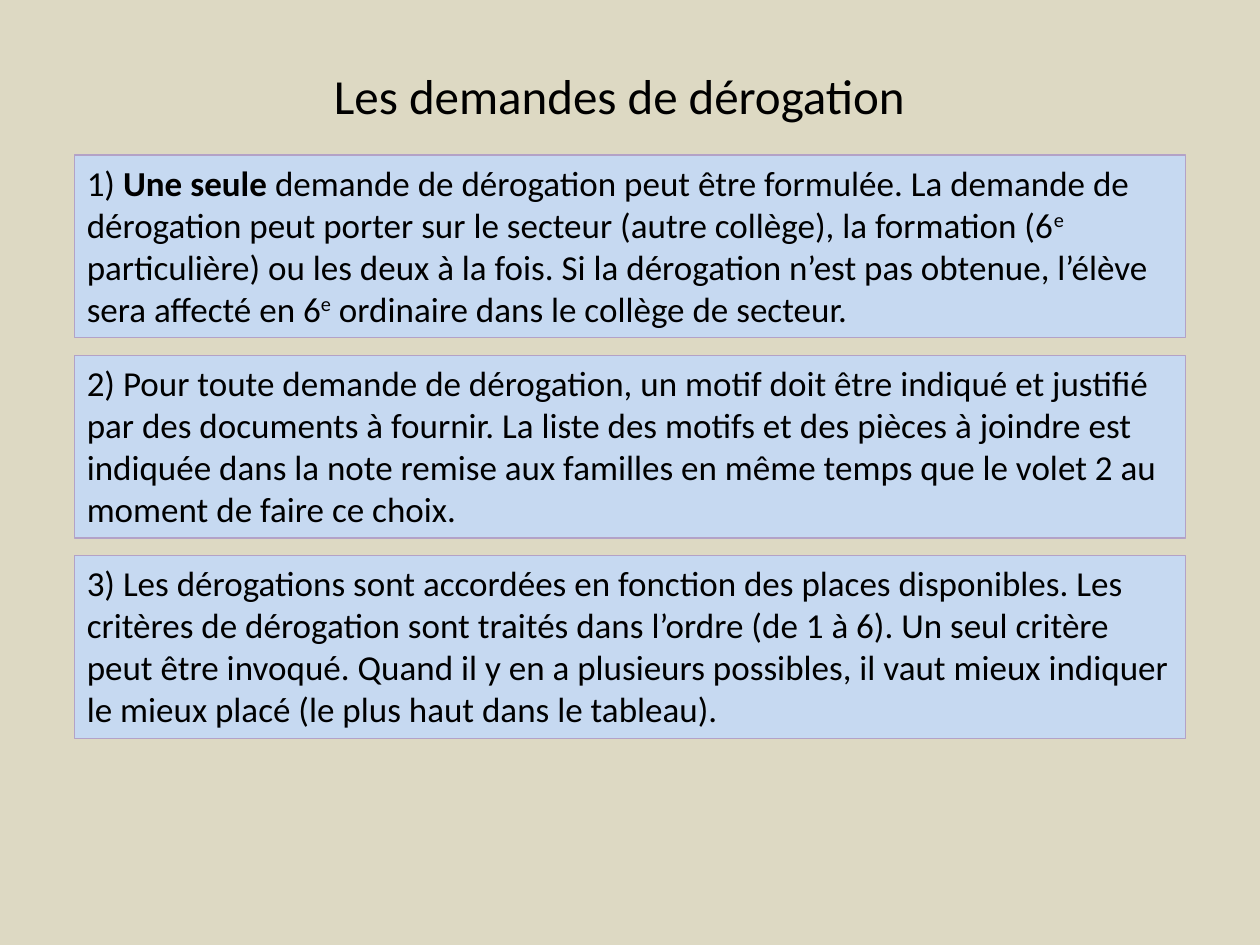
from dataclasses import dataclass

from pptx import Presentation
from pptx.dml.color import RGBColor
from pptx.enum.shapes import MSO_SHAPE
from pptx.enum.text import MSO_ANCHOR, MSO_AUTO_SIZE, PP_ALIGN
from pptx.slide import Slide
from pptx.util import Inches, Pt

BEIGE = RGBColor(0xDD, 0xD9, 0xC3)
PALE_BLUE = RGBColor(0xC6, 0xD9, 0xF1)
LILAC = RGBColor(0xB3, 0xA2, 0xC7)
BLACK = RGBColor(0, 0, 0)
FONT = "Calibri"

BOX_LEFT, BOX_TOP = 0.59, 1.23
BOX_WIDTH, BOX_HEIGHT = 8.82, 1.45
BOX_STEP = 1.59


@dataclass(frozen=True)
class Span:
    text: str
    bold: bool = False
    superscript: bool = False


ORDINAL = Span("e", superscript=True)
RULES = [
    [
        Span("1) "),
        Span("Une seule ", bold=True),
        Span("demande de dérogation peut être formulée. La demande de dérogation "
             "peut porter sur le secteur (autre collège), la formation (6"),
        ORDINAL,
        Span(" particulière) ou les deux à la fois. Si la dérogation n’est pas "
             "obtenue, l’élève sera affecté en 6"),
        ORDINAL,
        Span(" ordinaire dans le collège de secteur."),
    ],
    [
        Span("2) Pour toute demande de dérogation, un motif doit être indiqué et "
             "justifié par des documents à fournir. La liste des motifs et des pièces "
             "à joindre est indiquée dans la note remise aux familles en même temps "
             "que le volet 2 au moment de faire ce choix."),
    ],
    [
        Span("3) Les dérogations sont accordées en fonction des places disponibles. "
             "Les critères de dérogation sont traités dans l’ordre (de 1 à 6). Un seul "
             "critère peut être invoqué. Quand il y en a plusieurs possibles, il vaut "
             "mieux indiquer le mieux placé (le plus haut dans le tableau)."),
    ],
]


def format_paragraph(para, size: int, alignment: PP_ALIGN) -> None:
    para.alignment = alignment
    para.font.name = FONT
    para.font.size = Pt(size)
    para.font.color.rgb = BLACK


def add_title(page: Slide, text: str) -> None:
    title = page.shapes.title
    title.left, title.top = Inches(1.85), Inches(0.44)
    title.width, title.height = Inches(6.13), Inches(0.63)
    frame = title.text_frame
    frame.text = text
    frame.vertical_anchor = MSO_ANCHOR.MIDDLE
    format_paragraph(frame.paragraphs[0], 28, PP_ALIGN.CENTER)


def add_rule_box(page: Slide, top: float, spans: list[Span]) -> None:
    box = page.shapes.add_shape(
        MSO_SHAPE.RECTANGLE,
        Inches(BOX_LEFT), Inches(top), Inches(BOX_WIDTH), Inches(BOX_HEIGHT),
    )
    box.shadow.inherit = False
    box.fill.solid()
    box.fill.fore_color.rgb = PALE_BLUE
    box.line.color.rgb = LILAC
    box.line.width = Pt(0.75)
    frame = box.text_frame
    frame.word_wrap = True
    frame.auto_size = MSO_AUTO_SIZE.SHAPE_TO_FIT_TEXT
    frame.vertical_anchor = MSO_ANCHOR.TOP
    para = frame.paragraphs[0]
    format_paragraph(para, 20, PP_ALIGN.LEFT)
    for span in spans:
        run = para.add_run()
        run.text = span.text
        if span.bold:
            run.font.bold = True
        if span.superscript:
            run._r.get_or_add_rPr().set("baseline", "30000")


def main() -> None:
    deck = Presentation()
    deck.slide_width, deck.slide_height = Inches(10), Inches(7.5)
    page = deck.slides.add_slide(deck.slide_layouts[5])
    page.background.fill.solid()
    page.background.fill.fore_color.rgb = BEIGE
    add_title(page, "Les demandes de dérogation")
    for index, spans in enumerate(RULES):
        add_rule_box(page, BOX_TOP + index * BOX_STEP, spans)
    deck.save("out.pptx")


if __name__ == "__main__":
    main()
